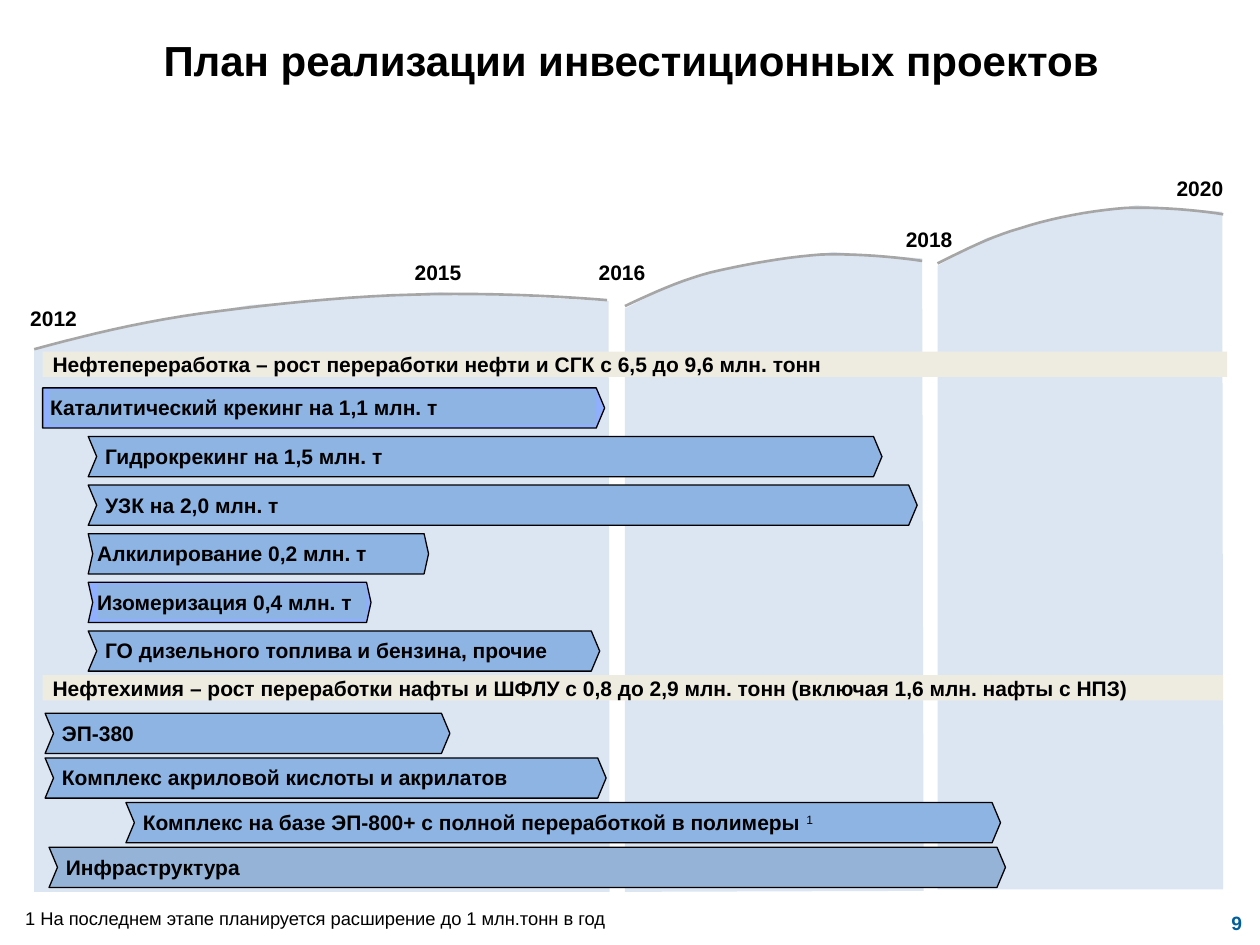
from pptx import Presentation
from pptx.dml.color import RGBColor
from pptx.enum.shapes import MSO_SHAPE
from pptx.enum.text import MSO_ANCHOR, PP_ALIGN
from pptx.util import Cm, Pt

LEFT, CENTER, RIGHT = PP_ALIGN.LEFT, PP_ALIGN.CENTER, PP_ALIGN.RIGHT
TOP, MIDDLE, BOTTOM = MSO_ANCHOR.TOP, MSO_ANCHOR.MIDDLE, MSO_ANCHOR.BOTTOM
RECTANGLE = MSO_SHAPE.RECTANGLE
BLACK, PALE, GREY, BEIGE = "000000", "DCE6F2", "A6A6A6", "EEECE1"
BLUE, VIOLET, STEEL, NAVY = "8EB4E3", "91AFFF", "95B3D7", "005E9D"


def paint(fill, color):
    if color:
        fill.solid()
        fill.fore_color.rgb = RGBColor.from_string(color)
    else:
        fill.background()


def write(box, text, size=12, color=BLACK, bold=True, align=LEFT, anchor=TOP,
          margins=(0, 0, 0, 0), superscript=""):
    frame = box.text_frame
    frame.word_wrap = True
    frame.vertical_anchor = anchor
    frame.margin_left, frame.margin_top, frame.margin_right, frame.margin_bottom = map(Cm, margins)
    para = frame.paragraphs[0]
    para.alignment = align
    for part in filter(None, (text, superscript)):
        span = para.add_run()
        span.text = part
        span.font.name = "Arial"
        span.font.size = Pt(size)
        span.font.bold = bold
        paint(span.font.fill, color)
    if superscript:
        span.font.bold = False
        span.font._element.set("baseline", "30000")


deck = Presentation()
deck.slide_width, deck.slide_height = Cm(25.4), Cm(19.05)
page = deck.slides.add_slide(deck.slide_layouts[6])
shapes = page.shapes

stages = [
    ([(0.69, 17.98), (12.29, 17.98), (12.27, 6.07), (8.79, 5.89), (5.05, 6.15),
      (2.69, 6.55), (0.69, 7.06)],
     [(0.69, 7.04), (1.73, 6.76), (2.77, 6.5), (4.04, 6.32), (5.31, 6.15),
      (6.96, 5.97), (8.31, 5.94), (9.68, 5.89), (11.28, 5.97), (12.24, 6.05)]),
    ([(12.6, 17.98), (18.62, 17.96), (18.59, 5.21), (16.79, 5.08), (14.88, 5.36),
      (13.64, 5.69), (12.6, 6.22)],
     [(12.6, 6.17), (13.13, 5.92), (13.69, 5.66), (14.33, 5.49), (15.01, 5.33),
      (15.85, 5.18), (16.56, 5.13), (17.25, 5.11), (18.08, 5.18), (18.59, 5.26)]),
    ([(18.9, 17.93), (24.66, 17.93), (24.64, 4.27), (22.91, 4.14), (21.11, 4.45),
      (19.89, 4.8), (18.9, 5.36)],
     [(18.9, 5.31), (19.43, 5.05), (19.94, 4.78), (20.57, 4.6), (21.21, 4.39),
      (22.02, 4.24), (22.71, 4.19), (23.39, 4.17), (24.18, 4.24), (24.66, 4.32)]),
]
STEPS = 10
for area, controls in stages:
    crest = [controls[0]]
    for first in (0, 3, 6):
        for step in range(1, STEPS + 1):
            t = step / STEPS
            weights = ((1 - t) ** 3, 3 * t * (1 - t) ** 2, 3 * t ** 2 * (1 - t), t ** 3)
            crest.append(tuple(
                sum(weight * point[axis] for weight, point in zip(weights, controls[first:first + 4]))
                for axis in (0, 1)))
    for outline, closed, fill, line in ((area, True, PALE, None), (crest, False, None, GREY)):
        points = [(Cm(x), Cm(y)) for x, y in outline]
        builder = shapes.build_freeform(*points[0])
        builder.add_line_segments(points[1:], close=closed)
        shape = builder.convert_to_shape()
        shape.shadow.inherit = False
        paint(shape.fill, fill)
        paint(shape.line.fill, line)
        shape.line.width = Pt(1.5)

years = [
    ("2012", 0.61, 6.15, 2.92, LEFT),
    ("2015", 8.36, 5.23, 2.92, LEFT),
    ("2016", 11.66, 5.23, 1.35, RIGHT),
    ("2018", 18.26, 4.57, 1.27, LEFT),
    ("2020", 23.39, 3.53, 1.27, RIGHT),
]
for year, left, top, width, align in years:
    box = shapes.add_textbox(Cm(left), Cm(top), Cm(width), Cm(0.51))
    write(box, year, align=align)

title = shapes.add_textbox(Cm(0.51), Cm(0.56), Cm(24.43), Cm(4.32))
write(title, "План реализации инвестиционных проектов", size=24, align=CENTER,
      margins=(0.25, 0.13, 0.25, 0.13))

sections = [
    ("Нефтепереработка – рост переработки нефти и СГК с 6,5 до 9,6 млн. тонн",
     7.09, 23.88, 7.82, 0.98, [
         ("Каталитический крекинг на 1,1 млн. т", 0.86, 12.19, 0, 0.17, VIOLET, BLUE, ""),
         ("Гидрокрекинг на 1,5 млн. т", 1.78, 17.78, 0.17, 0.17, BLUE, BLUE, ""),
         ("УЗК на 2,0 млн. т", 1.78, 18.49, 0.17, 0.17, BLUE, BLUE, ""),
         ("Алкилирование 0,2 млн. т", 1.78, 8.64, 0.09, 0.09, BLUE, BLUE, ""),
         ("Изомеризация 0,4 млн. т", 1.78, 7.48, 0.09, 0.09, VIOLET, BLUE, ""),
         ("ГО дизельного топлива и бензина, прочие", 1.78, 12.09, 0.17, 0.17, BLUE, BLUE, ""),
     ]),
    ("Нефтехимия – рост переработки нафты и ШФЛУ с 0,8 до 2,9 млн. тонн "
     "(включая 1,6 млн. нафты с НПЗ)",
     13.61, 23.8, 14.38, 0.9, [
         ("ЭП-380", 0.91, 9.07, 0.17, 0.17, BLUE, BLUE, ""),
         ("Комплекс акриловой кислоты и акрилатов", 0.91, 12.22, 0.17, 0.17, BLUE, BLUE, ""),
         ("Комплекс на базе ЭП-800+ с полной переработкой в полимеры ",
          2.54, 20.17, 0.17, 0.17, BLUE, BLUE, "1"),
         ("Инфраструктура", 0.99, 20.27, 0.17, 0.17, STEEL, STEEL, ""),
     ]),
]
BAR_HEIGHT = 0.81
for heading, band_top, band_width, first_top, pitch, projects in sections:
    band = shapes.add_shape(RECTANGLE, Cm(0.86), Cm(band_top), Cm(band_width), Cm(0.51))
    band.shadow.inherit = False
    paint(band.fill, BEIGE)
    paint(band.line.fill, None)
    write(band, heading, anchor=BOTTOM, margins=(0.2, 0, 0, 0))
    for row, (name, left, right, notch, tip, bar_color, label_color, mark) in enumerate(projects):
        top = first_top + row * pitch
        middle, bottom = top + BAR_HEIGHT / 2, top + BAR_HEIGHT
        outline = [(left, top), (right - tip, top), (right, middle), (right - tip, bottom),
                   (left, bottom), (left + notch, middle)]
        points = [(Cm(x), Cm(y)) for x, y in outline]
        builder = shapes.build_freeform(*points[0])
        builder.add_line_segments(points[1:], close=True)
        bar = builder.convert_to_shape()
        bar.shadow.inherit = False
        paint(bar.fill, bar_color)
        paint(bar.line.fill, BLACK)
        bar.line.width = Pt(0.75)

        label_left = left + max(2 * notch, 0.15)
        label = shapes.add_shape(RECTANGLE, Cm(label_left), Cm(top + 0.05),
                                 Cm(right - tip - label_left), Cm(0.69))
        label.shadow.inherit = False
        paint(label.fill, label_color)
        paint(label.line.fill, None)
        write(label, name, anchor=MIDDLE, superscript=mark)

footnote = shapes.add_textbox(Cm(0.51), Cm(18.29), Cm(24.08), Cm(0.46))
write(footnote, "1 На последнем этапе планируется расширение до 1 млн.тонн в год",
      size=10.5, bold=False)

number = shapes.add_textbox(Cm(20.19), Cm(18.14), Cm(5.08), Cm(0.91))
write(number, "9", size=11, color=NAVY, align=RIGHT, anchor=MIDDLE,
      margins=(0.23, 0.1, 0.23, 0.1))

deck.save("out.pptx")
